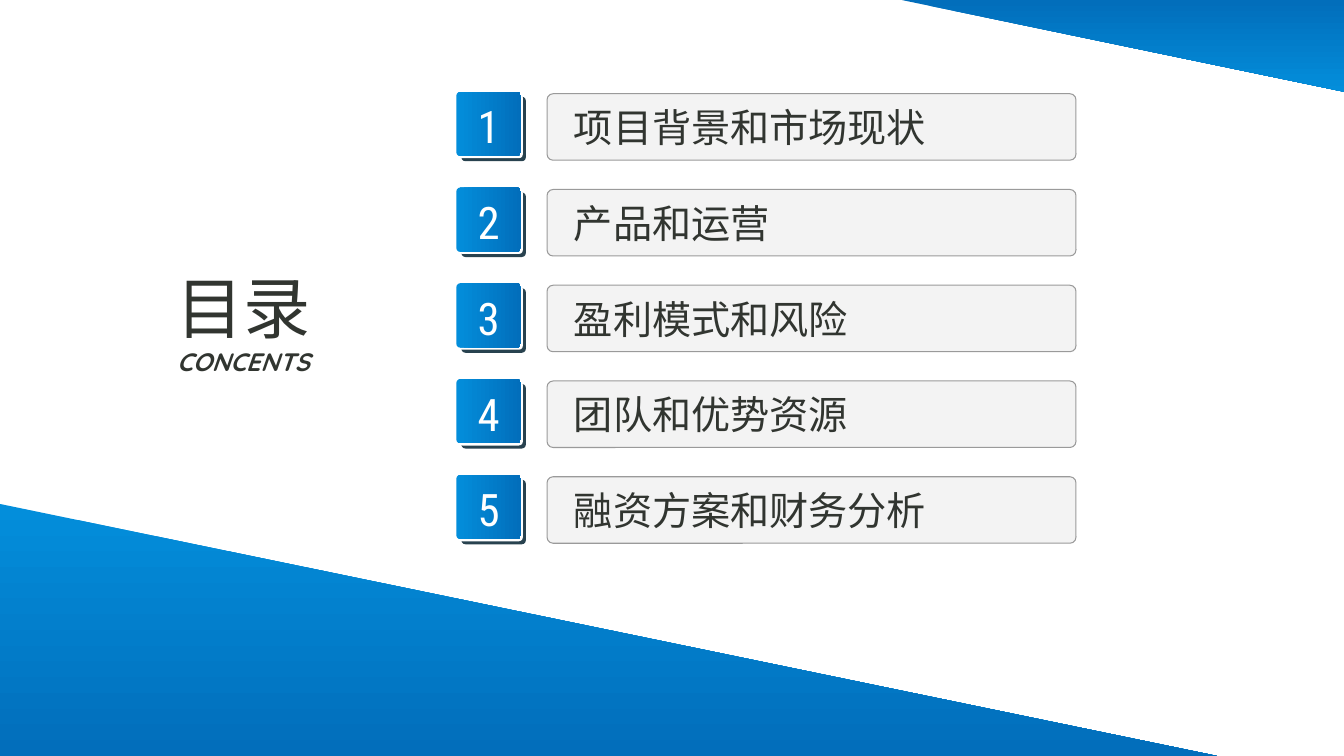
from lxml import etree
from pptx import Presentation
from pptx import util as u
from pptx.dml.color import RGBColor
from pptx.enum import shapes, text
from pptx.oxml.ns import qn

SKY = RGBColor(0x03, 0x8E, 0xDB)
BLUE = RGBColor(0x02, 0x6E, 0xBB)
SLATE = RGBColor(0x28, 0x42, 0x4F)
WHITE = RGBColor(0xFF, 0xFF, 0xFF)
PALE = RGBColor(0xF3, 0xF3, 0xF3)
GREY = RGBColor(0x9A, 0x9A, 0x9A)
INK = RGBColor(0x31, 0x35, 0x30)

WIDTH, HEIGHT = 13.34, 7.5
TOPICS = ["项目背景和市场现状", "产品和运营", "盈利模式和风险", "团队和优势资源", "融资方案和财务分析"]
ROW_PITCH = 0.95
BADGE_SIZE = 0.64


def fill_gradient(shape, angle, first=SKY, last=BLUE):
    """Fill a shape with a two-colour gradient."""
    shape.fill.gradient()
    shape.fill.gradient_angle = angle
    for stop, colour in zip(shape.fill.gradient_stops, (first, last)):
        stop.color.rgb = colour


def add_span(para, words, font, size, colour, bold=False, italic=False):
    """Add one formatted run to a paragraph."""
    span = para.add_run()
    span.text = words
    span.font.name = font
    span.font.size = u.Pt(size)
    span.font.color.rgb = colour
    span.font.bold = bold
    span.font.italic = italic
    east_asian = etree.SubElement(span.font._element, qn("a:ea"))
    east_asian.set("typeface", font)


def add_wedge(page, corners, first, last):
    """Draw a triangular corner band shaded from top to bottom."""
    points = [(u.Inches(x), u.Inches(y)) for x, y in corners]
    builder = page.shapes.build_freeform(*points[0])
    builder.add_line_segments(points[1:], close=True)
    wedge = builder.convert_to_shape()
    wedge.shadow.inherit = False
    wedge.line.fill.background()
    fill_gradient(wedge, 270, first, last)


def add_rounded(page, left, top, width, height, radius):
    """Add a rounded rectangle without line or shadow."""
    box = page.shapes.add_shape(
        shapes.MSO_SHAPE.ROUNDED_RECTANGLE,
        u.Inches(left), u.Inches(top), u.Inches(width), u.Inches(height))
    box.adjustments[0] = radius / min(width, height)
    box.shadow.inherit = False
    box.line.fill.background()
    return box


def set_frame(box, wrap, left=0, top=0):
    """Centre the text vertically and set the insets of a box."""
    frame = box.text_frame
    frame.word_wrap = wrap
    frame.vertical_anchor = text.MSO_ANCHOR.MIDDLE
    frame.margin_left, frame.margin_top = u.Inches(left), u.Inches(top)
    frame.margin_right = frame.margin_bottom = 0
    return frame


def add_badge(page, left, top, number):
    """Draw a numbered tile with an offset edge behind it."""
    for offset, colour in ((0.05, SLATE), (0.02, WHITE)):
        edge = add_rounded(page, left + offset, top + offset, BADGE_SIZE, BADGE_SIZE, 0.04)
        edge.fill.solid()
        edge.fill.fore_color.rgb = colour
    tile = add_rounded(page, left, top, BADGE_SIZE, BADGE_SIZE, 0.04)
    fill_gradient(tile, 0)
    para = set_frame(tile, False, top=0.04).paragraphs[0]
    para.alignment = text.PP_ALIGN.CENTER
    add_span(para, str(number), "Roboto Condensed", 32, WHITE)


def add_bar(page, left, top, width, height, topic):
    """Draw a pale bar holding one topic."""
    bar = add_rounded(page, left, top, width, height, 0.06)
    bar.fill.solid()
    bar.fill.fore_color.rgb = PALE
    bar.line.color.rgb = GREY
    bar.line.width = u.Pt(0.75)
    para = set_frame(bar, True, left=0.25).paragraphs[0]
    para.alignment = text.PP_ALIGN.LEFT
    add_span(para, topic, "Quicksand", 28, INK)


def add_agenda(page, left, top):
    """Stack the numbered topics at an equal pitch."""
    for index, topic in enumerate(TOPICS):
        row_top = top + index * ROW_PITCH
        add_badge(page, left, row_top, index + 1)
        add_bar(page, left + 0.9, row_top + 0.02, 5.25, 0.66, topic)


def add_title(page, left, top, width, height):
    """Write the heading and its subtitle."""
    box = page.shapes.add_textbox(
        u.Inches(left), u.Inches(top), u.Inches(width), u.Inches(height))
    frame = box.text_frame
    frame.word_wrap = False
    heading, subtitle = frame.paragraphs[0], frame.add_paragraph()
    heading.alignment = subtitle.alignment = text.PP_ALIGN.CENTER
    add_span(heading, "目录", "Noto Sans CJK SC", 48, INK)
    add_span(subtitle, "CONCENTS", "Quicksand", 18, INK, bold=True, italic=True)


def main():
    """Build the contents slide and save it."""
    deck = Presentation()
    deck.slide_width, deck.slide_height = u.Inches(WIDTH), u.Inches(HEIGHT)
    page = deck.slides.add_slide(deck.slide_layouts[6])
    add_wedge(page, [(0, 5), (12.08, HEIGHT), (0, HEIGHT)], SKY, BLUE)
    add_wedge(page, [(8.95, 0), (WIDTH, 0), (WIDTH, 0.91)], BLUE, SKY)
    add_title(page, 1.63, 2.59, 1.57, 1.21)
    add_agenda(page, 4.53, 0.91)
    deck.save("out.pptx")


if __name__ == "__main__":
    main()
